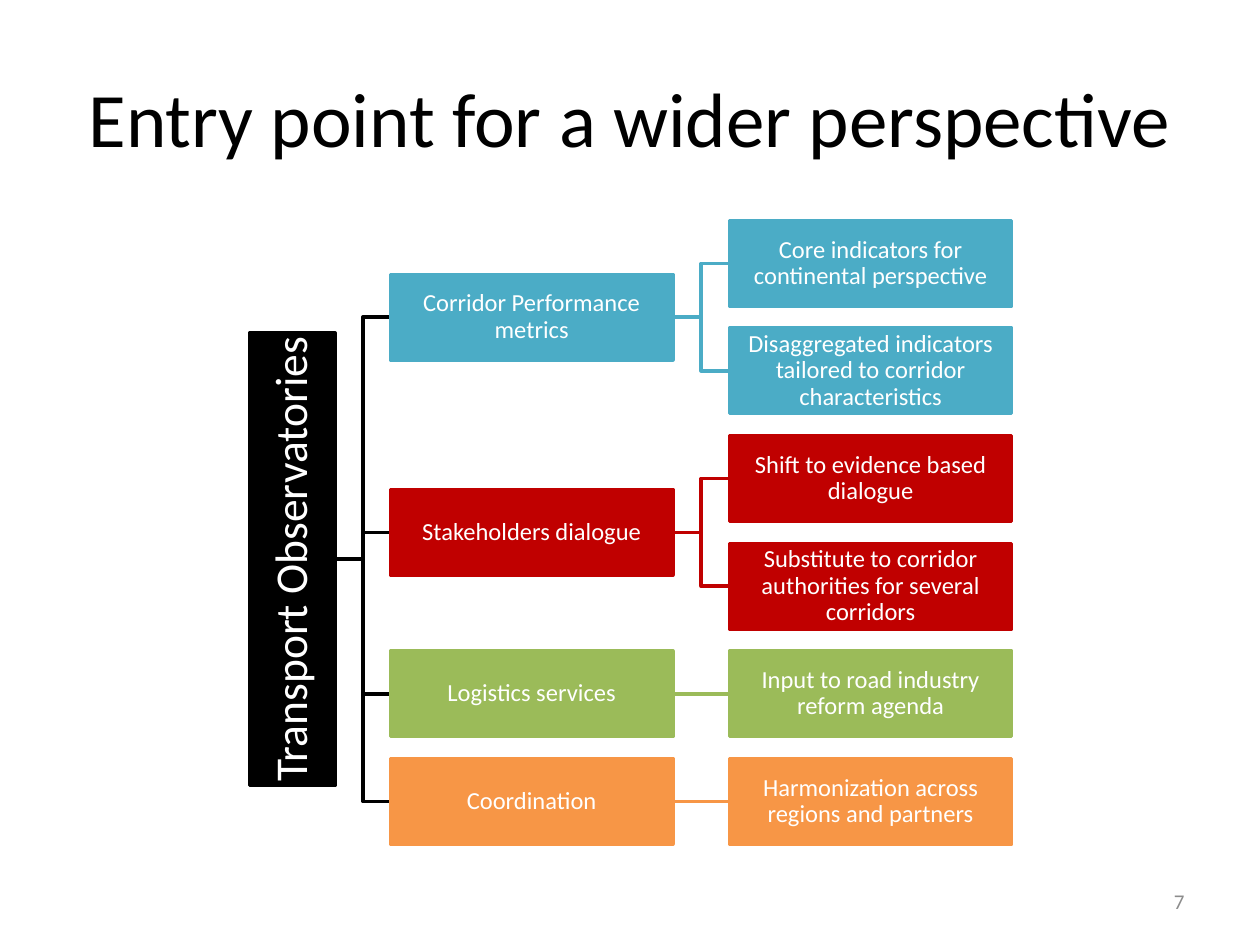
from dataclasses import dataclass

from lxml.etree import SubElement
from pptx import Presentation
from pptx.dml.color import RGBColor
from pptx.enum.shapes import MSO_CONNECTOR, MSO_SHAPE
from pptx.enum.text import MSO_ANCHOR, PP_ALIGN
from pptx.oxml.ns import qn
from pptx.util import Inches, Pt


@dataclass(frozen=True)
class Theme:
    font: str = "Calibri"
    black: str = "000000"
    white: str = "FFFFFF"
    grey: str = "8C8C8C"
    blue: str = "4BACC6"
    red: str = "C00000"
    green: str = "9BBB59"
    orange: str = "F79646"
    title_size: int = 44
    root_size: int = 26
    box_size: int = 14
    number_size: int = 12
    line_width: int = 2


theme = Theme()

BOX_WIDTH, BOX_HEIGHT = 2.24, 0.68
ROOT_LENGTH = 3.59
ROOT_RIGHT, BRANCH_LEFT, LEAF_LEFT = 2.66, 3.10, 5.79
BRANCH_RIGHT = BRANCH_LEFT + BOX_WIDTH
FIRST_ROW, ROW_PITCH = 2.09, 0.854

branches = [
    ("Corridor Performance metrics", theme.blue,
     ["Core indicators for continental perspective",
      "Disaggregated indicators tailored to corridor characteristics"]),
    ("Stakeholders dialogue", theme.red,
     ["Shift to evidence based dialogue",
      "Substitute to corridor authorities for several corridors"]),
    ("Logistics services", theme.green, ["Input to road industry reform agenda"]),
    ("Coordination", theme.orange, ["Harmonization across regions and partners"]),
]

presentation = Presentation()
presentation.slide_width, presentation.slide_height = Inches(10), Inches(7.5)
slide = presentation.slides.add_slide(presentation.slide_layouts[6])


def write(shape, text, size, color, alignment=PP_ALIGN.CENTER):
    """Put one vertically centred paragraph into a shape."""
    text_frame = shape.text_frame
    text_frame.word_wrap = True
    text_frame.vertical_anchor = MSO_ANCHOR.MIDDLE
    text_frame.text = text
    paragraph = text_frame.paragraphs[0]
    paragraph.alignment = alignment
    font = paragraph.runs[0].font
    font.name, font.size = theme.font, Pt(size)
    font.color.rgb = RGBColor.from_string(color)
    return paragraph


def link(left, start_y, right, end_y, color):
    """Join two boxes with a straight line, or a bent one if their heights differ."""
    start = Inches(left), Inches(start_y)
    end = Inches(right), Inches(end_y)
    if abs(start_y - end_y) < 0.01:
        line = slide.shapes.add_connector(MSO_CONNECTOR.STRAIGHT, *start, *end)
        SubElement(line._element.spPr, qn("a:effectLst"))
    else:
        middle = Inches((left + right) / 2)
        builder = slide.shapes.build_freeform(*start)
        builder.add_line_segments([(middle, start[1]), (middle, end[1]), end], close=False)
        line = builder.convert_to_shape()
        line.fill.background()
        line.shadow.inherit = False
    line.line.color.rgb = RGBColor.from_string(color)
    line.line.width = Pt(theme.line_width)


title = slide.shapes.add_textbox(Inches(0.5), Inches(0.3), Inches(9), Inches(1.25))
write(title, "Entry point for a wider perspective", theme.title_size, theme.black)

# Each leaf takes one row; a branch is centred on its leaves, the root on its branches.
boxes, branch_centers, row = [], [], 0
for name, color, leaves in branches:
    leaf_centers = [FIRST_ROW + ROW_PITCH * (row + i) for i in range(len(leaves))]
    row += len(leaves)
    center = sum(leaf_centers) / len(leaves)
    branch_centers.append(center)
    boxes.append((name, BRANCH_LEFT, center, color))
    for leaf, leaf_center in zip(leaves, leaf_centers):
        boxes.append((leaf, LEAF_LEFT, leaf_center, color))
        link(BRANCH_RIGHT, center, LEAF_LEFT, leaf_center, color)

root_center = (branch_centers[0] + branch_centers[-1]) / 2
for center in branch_centers:
    link(ROOT_RIGHT, root_center, BRANCH_LEFT, center, theme.black)

# The root lies on its side, so its left edge is taken before the turn.
root_left = ROOT_RIGHT - (BOX_HEIGHT + ROOT_LENGTH) / 2
diagram = [("Transport Observatories", root_left, root_center, theme.black,
            ROOT_LENGTH, theme.root_size, 270, 0.02)]
diagram += [(*box, BOX_WIDTH, theme.box_size, 0, 0.01) for box in boxes]

for text, left, center, color, width, size, rotation, inset in diagram:
    box = slide.shapes.add_shape(
        MSO_SHAPE.RECTANGLE, Inches(left), Inches(center - BOX_HEIGHT / 2),
        Inches(width), Inches(BOX_HEIGHT))
    box.rotation = rotation
    box.shadow.inherit = False
    box.fill.solid()
    box.fill.fore_color.rgb = box.line.color.rgb = RGBColor.from_string(color)
    box.line.width = Pt(theme.line_width)
    text_frame = box.text_frame
    text_frame.margin_left = text_frame.margin_right = Inches(inset)
    text_frame.margin_top = text_frame.margin_bottom = Inches(inset)
    paragraph = write(box, text, size, theme.white)
    paragraph.line_spacing = 0.9

number = slide.shapes.add_textbox(Inches(7.17), Inches(6.95), Inches(2.33), Inches(0.4))
write(number, "7", theme.number_size, theme.grey, PP_ALIGN.RIGHT)

presentation.save("out.pptx")
